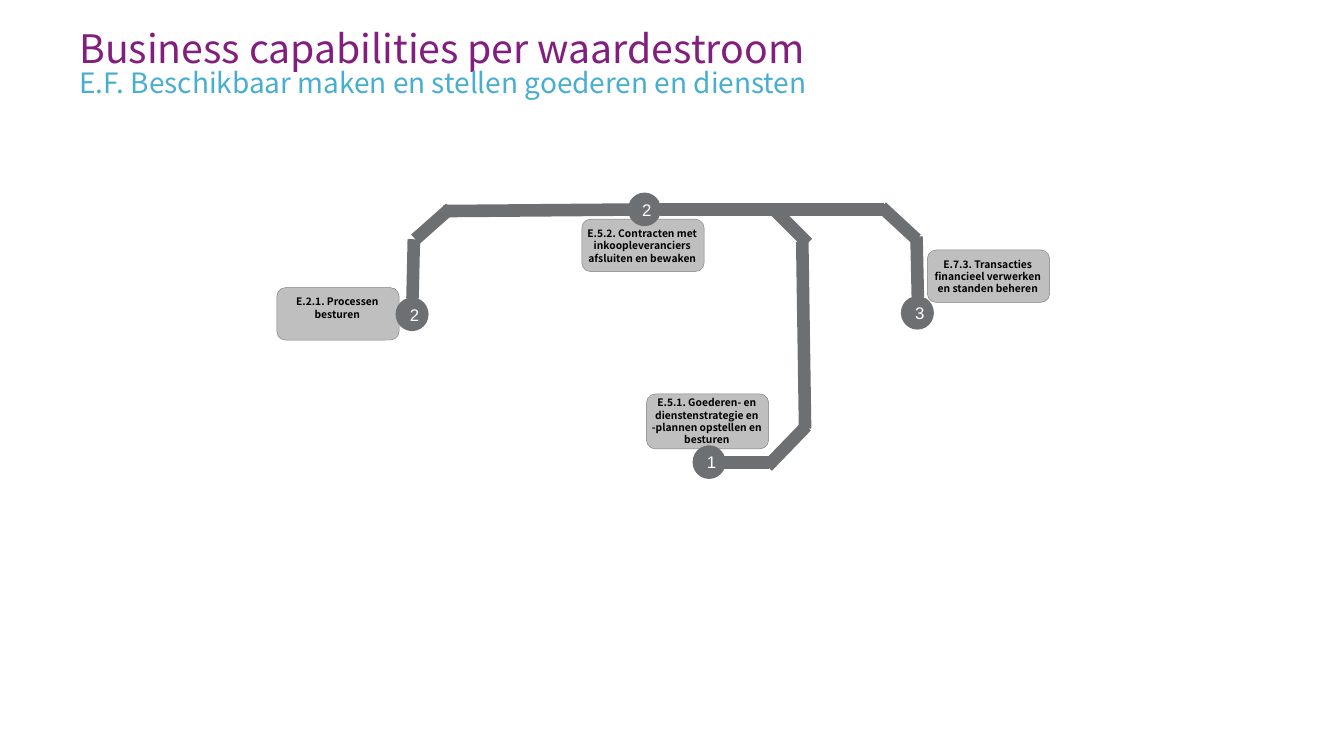
import pptx
import pptx.dml.color
import pptx.enum.shapes
import pptx.enum.text
import pptx.oxml.ns
import pptx.util
from pptx.util import Pt

RGBColor = pptx.dml.color.RGBColor
SHAPE = pptx.enum.shapes.MSO_SHAPE
ANCHOR = pptx.enum.text.MSO_ANCHOR
ALIGN = pptx.enum.text.PP_ALIGN

PURPLE = RGBColor(0x82, 0x1E, 0x7D)
BLUE = RGBColor(0x48, 0xAE, 0xD0)
TRACK = RGBColor(0x6D, 0x70, 0x73)
LABEL_FILL = RGBColor(0xBF, 0xBF, 0xBF)
LABEL_LINE = RGBColor(0x80, 0x80, 0x80)
BLACK = RGBColor(0, 0, 0)
WHITE = RGBColor(0xFF, 0xFF, 0xFF)

SANS = "Noto Sans CJK TC"
LABEL_WIDTH = 65.5
STOP_SIZE = (16.7, 17)

# Label: left, top, height, top inset, text (relative to the map)
LABELS = [
    (198, 107.3, 29.5, 0,
     "E.5.1. Goederen- en dienstenstrategie en -plannen opstellen en besturen"),
    (348.5, 30.2, 28.1, 2.9,
     "E.7.3. Transacties financieel verwerken en standen beheren"),
    (0, 50.4, 28.1, 2.9, "E.2.1. Processen besturen"),
    (163.4, 13.7, 28.1, 2.9,
     "E.5.2. Contracten met inkoopleveranciers afsluiten en bewaken"),
]

# Stop: left, top, number
STOPS = [
    (223.2, 135.4, "1"),
    (334.8, 55.4, "3"),
    (188.6, 0, "2"),
    (64.1, 56.2, "2"),
]

# Track piece: x and y of both ends
TRACKS = [
    # Branch from stop 1 up to the main line
    (263.5, 144, 239.8, 144),
    (262.8, 146.2, 283.7, 124.6),
    (283, 126, 281.5, 25.9),
    (284.4, 26.6, 265.7, 7.9),
    # Main line, right half
    (342.7, 24.5, 324, 7.2),
    (325.4, 8.6, 205.2, 8.6),
    (343.4, 55.4, 342.7, 23),
    # Main line, left half
    (74.2, 24.5, 92.9, 7.9),
    (89.3, 9.4, 188.6, 8.6),
    (72.7, 56.2, 73.4, 24.5),
]


def set_text(sp, text, font, size, color, bold=False):
    p = sp.text_frame.paragraphs[0]
    p.text = text
    f = p.runs[0].font
    f.name, f.size, f.bold = font, Pt(size), bold
    f.color.rgb = color
    return p


def set_insets(tf, left, top, right, bottom):
    tf.margin_left, tf.margin_top = Pt(left), Pt(top)
    tf.margin_right, tf.margin_bottom = Pt(right), Pt(bottom)


def add_heading(s, left, top, width, height):
    lines = [
        (0, 28, "Business capabilities per waardestroom", 21, PURPLE, Pt(28)),
        (21.6, height - 21.6,
         "E.F. Beschikbaar maken en stellen goederen en diensten", 15, BLUE, 1.2),
    ]
    for dy, h, text, size, color, spacing in lines:
        sp = s.shapes.add_textbox(Pt(left), Pt(top + dy), Pt(width), Pt(h))
        sp.text_frame.word_wrap = True
        set_insets(sp.text_frame, 0, 0, 0, 0)
        set_text(sp, text, SANS, size, color).line_spacing = spacing


def add_box(s, shape, left, top, width, height, fill, line, line_width):
    sp = s.shapes.add_shape(shape, Pt(left), Pt(top), Pt(width), Pt(height))
    sp.shadow.inherit = False
    sp.fill.solid()
    sp.fill.fore_color.rgb = fill
    sp.line.color.rgb = line
    sp.line.width = Pt(line_width)
    sp.text_frame.word_wrap = True
    return sp


def add_map(s, left, top):
    # Capability labels
    for x, y, h, inset, text in LABELS:
        sp = add_box(s, SHAPE.ROUNDED_RECTANGLE, left + x, top + y,
                     LABEL_WIDTH, h, LABEL_FILL, LABEL_LINE, 0.25)
        set_insets(sp.text_frame, 0, inset, 0.7, 2.9)
        sp.text_frame.vertical_anchor = ANCHOR.TOP
        set_text(sp, text, SANS, 5.5, BLACK, True).alignment = ALIGN.CENTER

    # Numbered stops
    for x, y, number in STOPS:
        sp = add_box(s, SHAPE.OVAL, left + x, top + y, *STOP_SIZE, TRACK, TRACK, 1)
        sp.text_frame.vertical_anchor = ANCHOR.MIDDLE
        set_text(sp, number, "Arial", 9, WHITE).alignment = ALIGN.CENTER

    # Tracks
    for x1, y1, x2, y2 in TRACKS:
        line = s.shapes.add_connector(
            pptx.enum.shapes.MSO_CONNECTOR.STRAIGHT,
            Pt(left + x1), Pt(top + y1), Pt(left + x2), Pt(top + y2))
        line.line.color.rgb = TRACK
        line.line.width = Pt(6.75)
        sp_pr = line._element.spPr
        sp_pr.append(sp_pr.makeelement(pptx.oxml.ns.qn("a:effectLst"), {}))


def main():
    prs = pptx.Presentation()
    prs.slide_width, prs.slide_height = Pt(720), Pt(405)
    s = prs.slides.add_slide(prs.slide_layouts[6])
    add_heading(s, 42.5, 10, 544, 37.5)
    add_map(s, 148.3, 103.7)
    prs.save("out.pptx")


if __name__ == "__main__":
    main()
